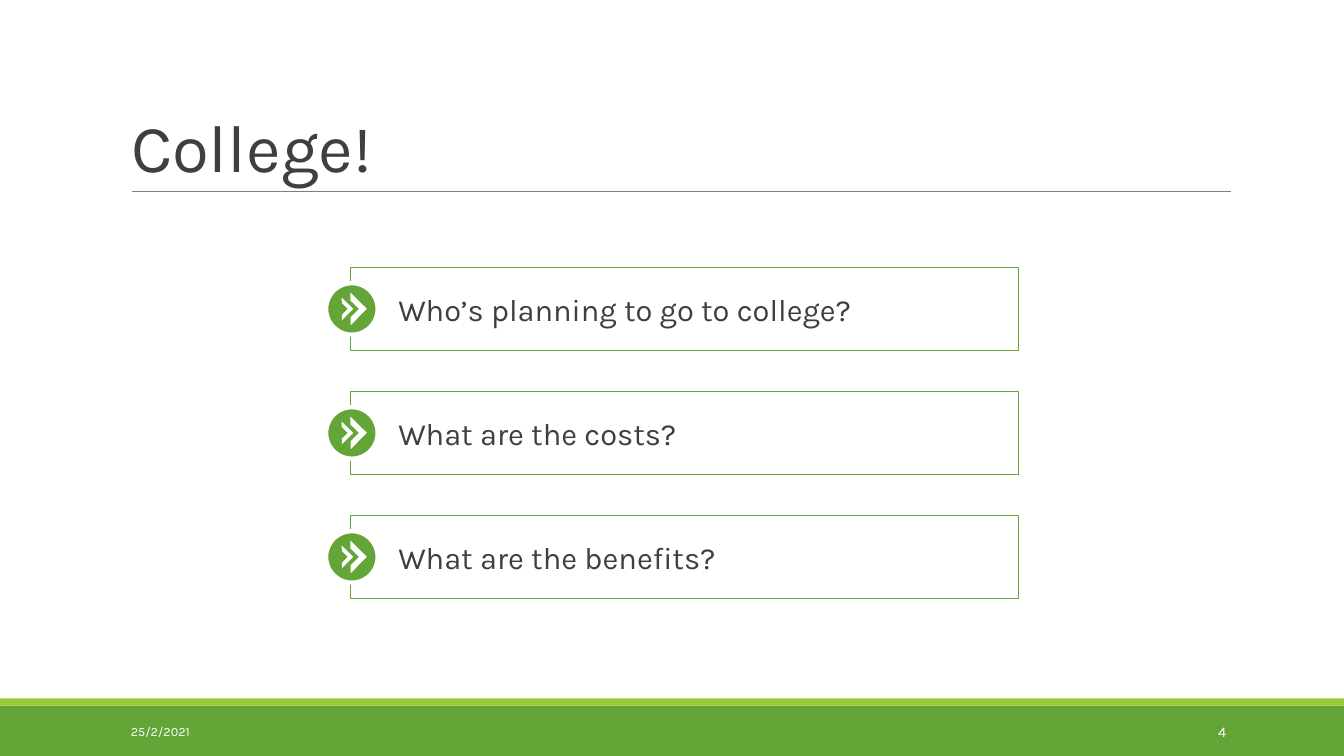
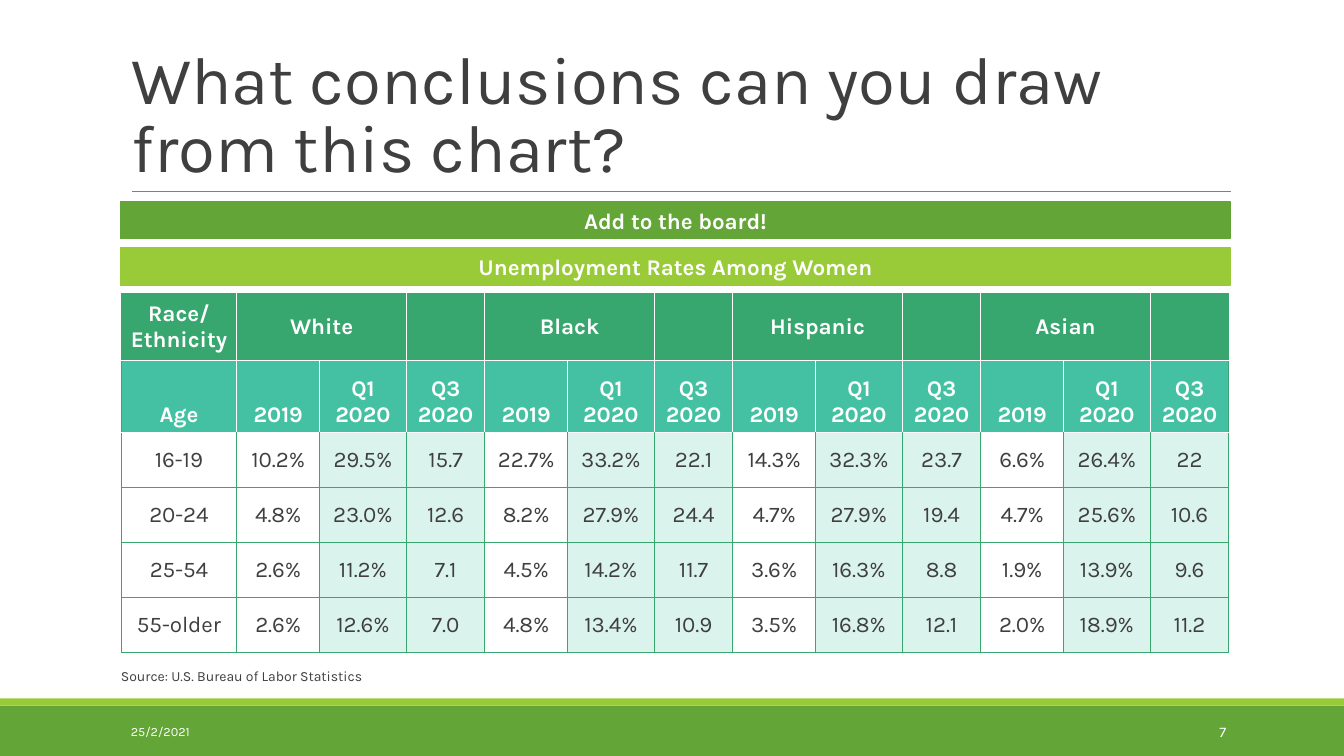
from lxml import etree
from pptx import Presentation
from pptx.dml.color import RGBColor
from pptx.enum import shapes, text
from pptx.oxml import ns
from pptx import util as u

FONT = "Karla"
INK = RGBColor(0x3F, 0x3F, 0x3F)
GREY = RGBColor(0x7F, 0x7F, 0x7F)
WHITE = RGBColor(0xFF, 0xFF, 0xFF)
GREEN = RGBColor(0x63, 0xA5, 0x37)
LIME = RGBColor(0x99, 0xCB, 0x38)
EMERALD = RGBColor(0x37, 0xA7, 0x6F)
TEAL = RGBColor(0x44, 0xC1, 0xA3)
MINT = RGBColor(0xDA, 0xF3, 0xED)

SLIDE_WIDTH, SLIDE_HEIGHT = 13.33, 7.5
MARGIN, CONTENT_WIDTH = 1.2, 11
BAND_TOP, STRIPE_HEIGHT = 7, 0.07
RULE_TOP = 1.9

PRESET = shapes.MSO_SHAPE
ALIGN = text.PP_ALIGN
ANCHOR = text.MSO_ANCHOR


def write(frame, words, size, color=INK, bold=False, align=ALIGN.LEFT):
    frame.text = words
    frame.word_wrap = True
    for para in frame.paragraphs:
        para.alignment = align
        for span in para.runs:
            span.font.name = FONT
            span.font.size = u.Pt(size)
            span.font.bold = bold
            span.font.color.rgb = color


def draw(page, preset, left, top, width, height, fill=None, line=None, weight=0.75):
    """Add a preset shape measured in inches; without a colour, fill or line is off."""
    shape = page.shapes.add_shape(preset, *map(u.Inches, (left, top, width, height)))
    shape.shadow.inherit = False
    if fill is None:
        shape.fill.background()
    else:
        shape.fill.solid()
        shape.fill.fore_color.rgb = fill
    if line is None:
        shape.line.fill.background()
    else:
        shape.line.color.rgb = line
        shape.line.width = u.Pt(weight)
    return shape


deck = Presentation()
deck.slide_width = u.Inches(SLIDE_WIDTH)
deck.slide_height = u.Inches(SLIDE_HEIGHT)
title_only = deck.slide_layouts.get_by_name("Title Only")

# Title, rule, bands and footer of every slide
pages = []
for heading, number in (
    ("College!", "4"),
    ("What conclusions can you draw from this chart?", "7"),
):
    page = deck.slides.add_slide(title_only)
    pages.append(page)
    draw(page, PRESET.RECTANGLE, 0, BAND_TOP, SLIDE_WIDTH, SLIDE_HEIGHT - BAND_TOP, GREEN)
    draw(page, PRESET.RECTANGLE, 0, BAND_TOP - STRIPE_HEIGHT, SLIDE_WIDTH, STRIPE_HEIGHT, LIME)

    rule = page.shapes.add_connector(
        shapes.MSO_CONNECTOR.STRAIGHT,
        *map(u.Inches, (1.31, RULE_TOP, 12.21, RULE_TOP)),
    )
    rule.line.color.rgb = GREY
    rule.line.width = u.Pt(0.75)
    etree.SubElement(rule._element.spPr, ns.qn("a:effectLst"))

    title = page.shapes.title
    title.left, title.top = u.Inches(MARGIN), u.Inches(0.31)
    title.width, title.height = u.Inches(CONTENT_WIDTH), u.Inches(RULE_TOP - 0.31)
    write(title.text_frame, heading, 48)
    title.text_frame.auto_size = text.MSO_AUTO_SIZE.NONE
    title.text_frame.vertical_anchor = ANCHOR.BOTTOM
    title.text_frame.paragraphs[0].line_spacing = 0.85

    for words, left, width, size, align in (
        ("25/2/2021", MARGIN, 2.7, 9, ALIGN.LEFT),
        (number, 10.83, 1.43, 10.5, ALIGN.RIGHT),
    ):
        footer = page.shapes.add_textbox(*map(u.Inches, (left, 7.06, width, 0.4)))
        write(footer.text_frame, words, size, WHITE, align=align)
        footer.text_frame.vertical_anchor = ANCHOR.MIDDLE

question_page, table_page = pages

# Questions, each with a double-chevron badge on its left edge
QUESTION_LEFT, QUESTION_TOP, QUESTION_PITCH = 3.48, 2.65, 1.23
QUESTION_WIDTH, QUESTION_HEIGHT = 6.62, 0.83
BADGE = 0.51
questions = (
    "Who’s planning to go to college?",
    "What are the costs?",
    "What are the benefits?",
)
for row, question in enumerate(questions):
    top = QUESTION_TOP + row * QUESTION_PITCH
    middle = top + QUESTION_HEIGHT / 2
    box = draw(question_page, PRESET.RECTANGLE, QUESTION_LEFT, top,
               QUESTION_WIDTH, QUESTION_HEIGHT, line=GREEN)
    write(box.text_frame, question, 22)
    box.text_frame.margin_left = u.Inches(0.47)
    box.text_frame.vertical_anchor = ANCHOR.MIDDLE

    draw(question_page, PRESET.OVAL, QUESTION_LEFT - BADGE / 2 + 0.01, middle - BADGE / 2,
         BADGE, BADGE, GREEN, WHITE, 3)
    for left, size in ((3.36, 0.23), (3.31, 0.16)):
        chevron = draw(question_page, PRESET.HALF_FRAME, left, middle - size / 2,
                       size, size, WHITE)
        chevron.rotation = 134.5
        chevron.adjustments[0] = chevron.adjustments[1] = 0.24

# Banners above the table
for words, top, color in (
    ("Add to the board!", 2, GREEN),
    ("Unemployment Rates Among Women", 2.46, LIME),
):
    banner = draw(table_page, PRESET.RECTANGLE, MARGIN, top, CONTENT_WIDTH, 0.37, color, color)
    write(banner.text_frame, words, 16, WHITE, True, ALIGN.CENTER)
    banner.text_frame.vertical_anchor = ANCHOR.MIDDLE

# Unemployment table: an age column, then three periods for each group
groups = ("White", "Black", "Hispanic", "Asian")
periods = ("2019", "Q1 2020", "Q3 2020")
rates = (
    "16-19 10.2% 29.5% 15.7 22.7% 33.2% 22.1 14.3% 32.3% 23.7 6.6% 26.4% 22",
    "20-24 4.8% 23.0% 12.6 8.2% 27.9% 24.4 4.7% 27.9% 19.4 4.7% 25.6% 10.6",
    "25-54 2.6% 11.2% 7.1 4.5% 14.2% 11.7 3.6% 16.3% 8.8 1.9% 13.9% 9.6",
    "55-older 2.6% 12.6% 7.0 4.8% 13.4% 10.9 3.5% 16.8% 12.1 2.0% 18.9% 11.2",
)
group_row = ["Race/\nEthnicity"]
for group in groups:
    group_row += [group, "", ""]
rows = [group_row, ["Age", *periods * len(groups)], *(line.split() for line in rates)]
column_widths = [1.15] + [0.82, 0.86, 0.78] * len(groups)
row_heights = [0.67, 0.71] + [0.54] * len(rates)
last_column = len(column_widths) - 1

table = table_page.shapes.add_table(
    len(rows), len(column_widths),
    *map(u.Inches, (MARGIN, 2.91, sum(column_widths), sum(row_heights))),
).table
table.first_row = table.horz_banding = False
for column, width in zip(table.columns, column_widths):
    column.width = u.Inches(width)
for row, height in zip(table.rows, row_heights):
    row.height = u.Inches(height)

for r, values in enumerate(rows):
    is_header = r < 2
    inner = WHITE if is_header else EMERALD
    for c, value in enumerate(values):
        cell = table.cell(r, c)
        write(cell.text_frame, value, 16, WHITE if is_header else INK, is_header, ALIGN.CENTER)
        cell.vertical_anchor = ANCHOR.BOTTOM if r == 1 else ANCHOR.MIDDLE
        cell.margin_left = cell.margin_right = u.Inches(0.08)
        cell.margin_top = cell.margin_bottom = u.Inches(0.04 if is_header else 0.14)

        borders = {
            "a:lnL": EMERALD if c == 0 else inner,
            "a:lnR": EMERALD if c == last_column else inner,
            "a:lnT": WHITE if r in (1, 2) else EMERALD,
            "a:lnB": inner,
        }
        properties = cell._tc.get_or_add_tcPr()
        for side, color in borders.items():
            border = etree.SubElement(properties, ns.qn(side), w=str(u.Pt(0.75)))
            solid = etree.SubElement(border, ns.qn("a:solidFill"))
            etree.SubElement(solid, ns.qn("a:srgbClr"), val=str(color))

        if is_header or c % 3 != 1 and c > 0:
            cell.fill.solid()
            cell.fill.fore_color.rgb = (EMERALD, TEAL)[r] if is_header else MINT
        else:
            cell.fill.background()

for first in range(1, last_column, len(periods)):
    table.cell(0, first).merge(table.cell(0, first + 1))

source = table_page.shapes.add_textbox(*map(u.Inches, (MARGIN, 6.45, CONTENT_WIDTH, 0.34)))
write(source.text_frame, "Source: U.S. Bureau of Labor Statistics", 10)
source.text_frame.vertical_anchor = ANCHOR.BOTTOM
source.text_frame.margin_left = source.text_frame.margin_right = 0
source.text_frame.margin_top = source.text_frame.margin_bottom = 0

deck.save("out.pptx")
